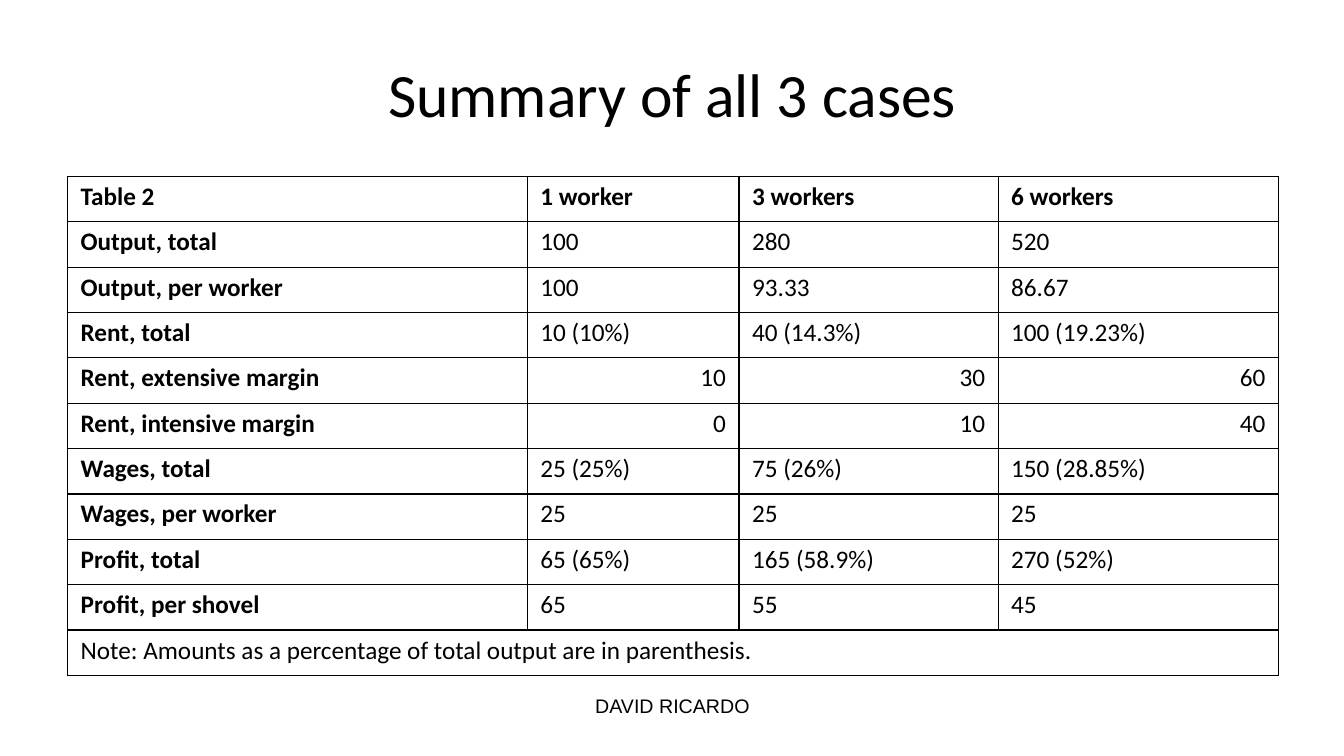
from dataclasses import dataclass

from lxml import etree
from pptx import Presentation
from pptx import util as u
from pptx.dml.color import RGBColor
from pptx.enum import text
from pptx.oxml import ns


@dataclass(frozen=True)
class Theme:
    ink: RGBColor = RGBColor(0, 0, 0)
    body_font: str = "Calibri"
    footer_font: str = "Arial"
    title_size: int = 44
    table_size: int = 18
    footer_size: int = 14
    border_width: int = 1


theme = Theme()


def px(length):
    return u.Emu(length * 9144)


def write(frame, wording, font, size, align, bold=False):
    paragraph = frame.paragraphs[0]
    paragraph.alignment = align
    run = paragraph.add_run()
    run.text = wording
    run.font.name = font
    run.font.size = u.Pt(size)
    run.font.bold = bold
    run.font.color.rgb = theme.ink
    return paragraph


LEFT = text.PP_ALIGN.LEFT
CENTER = text.PP_ALIGN.CENTER
RIGHT = text.PP_ALIGN.RIGHT

rows = [
    ("Table 2", "1 worker", "3 workers", "6 workers"),
    ("Output, total", "100", "280", "520"),
    ("Output, per worker", "100", "93.33", "86.67"),
    ("Rent, total", "10 (10%)", "40 (14.3%)", "100 (19.23%)"),
    ("Rent, extensive margin", "10", "30", "60"),
    ("Rent, intensive margin", "0", "10", "40"),
    ("Wages, total", "25 (25%)", "75 (26%)", "150 (28.85%)"),
    ("Wages, per worker", "25", "25", "25"),
    ("Profit, total", "65 (65%)", "165 (58.9%)", "270 (52%)"),
    ("Profit, per shovel", "65", "55", "45"),
    ("Note: Amounts as a percentage of total output are in parenthesis.",),
]
column_widths = [456, 210, 257, 278]
row_height = 45
note_row = len(rows) - 1

presentation = Presentation()
presentation.slide_width = px(1333)
presentation.slide_height = px(750)
slide = presentation.slides.add_slide(presentation.slide_layouts[5])

title = slide.shapes.title
title.left, title.top, title.width, title.height = px(67), px(30), px(1200), px(125)
title.text_frame.vertical_anchor = text.MSO_ANCHOR.MIDDLE
write(title.text_frame, "Summary of all 3 cases", theme.body_font, theme.title_size, CENTER)

table = slide.shapes.add_table(
    len(rows), len(column_widths), px(67), px(175),
    px(sum(column_widths)), px(row_height * len(rows)),
).table
table.first_row = False
table.horz_banding = False
for column, width in zip(table.columns, column_widths):
    column.width = px(width)
for row in table.rows:
    row.height = px(row_height)
table.cell(note_row, 0).merge(table.cell(note_row, len(column_widths) - 1))

for row_index, values in enumerate(rows):
    for column_index, wording in enumerate(values):
        is_label = column_index == 0 and row_index != note_row
        is_margin = values[0].endswith("margin") and column_index > 0
        paragraph = write(
            table.cell(row_index, column_index).text_frame, wording,
            theme.body_font, theme.table_size, RIGHT if is_margin else LEFT,
            bold=is_label or row_index == 0,
        )
        properties = paragraph._p.get_or_add_pPr()
        properties.set("marL", str(px(38)))
        properties.set("indent", str(px(-38)))

for cell in table.iter_cells():
    cell.margin_left = cell.margin_right = px(13)
    cell.margin_top = cell.margin_bottom = px(5)
    cell.vertical_anchor = text.MSO_ANCHOR.TOP
    properties = cell._tc.get_or_add_tcPr()
    for side in ("lnL", "lnR", "lnT", "lnB"):
        border = etree.SubElement(properties, ns.qn(f"a:{side}"), w=str(u.Pt(theme.border_width)))
        fill = etree.SubElement(border, ns.qn("a:solidFill"))
        etree.SubElement(fill, ns.qn("a:srgbClr"), val=str(theme.ink))
    cell.fill.background()

footer = slide.shapes.add_textbox(px(456), px(683), px(422), px(52))
footer.text_frame.word_wrap = True
write(footer.text_frame, "DAVID RICARDO", theme.footer_font, theme.footer_size, CENTER)

presentation.save("out.pptx")
